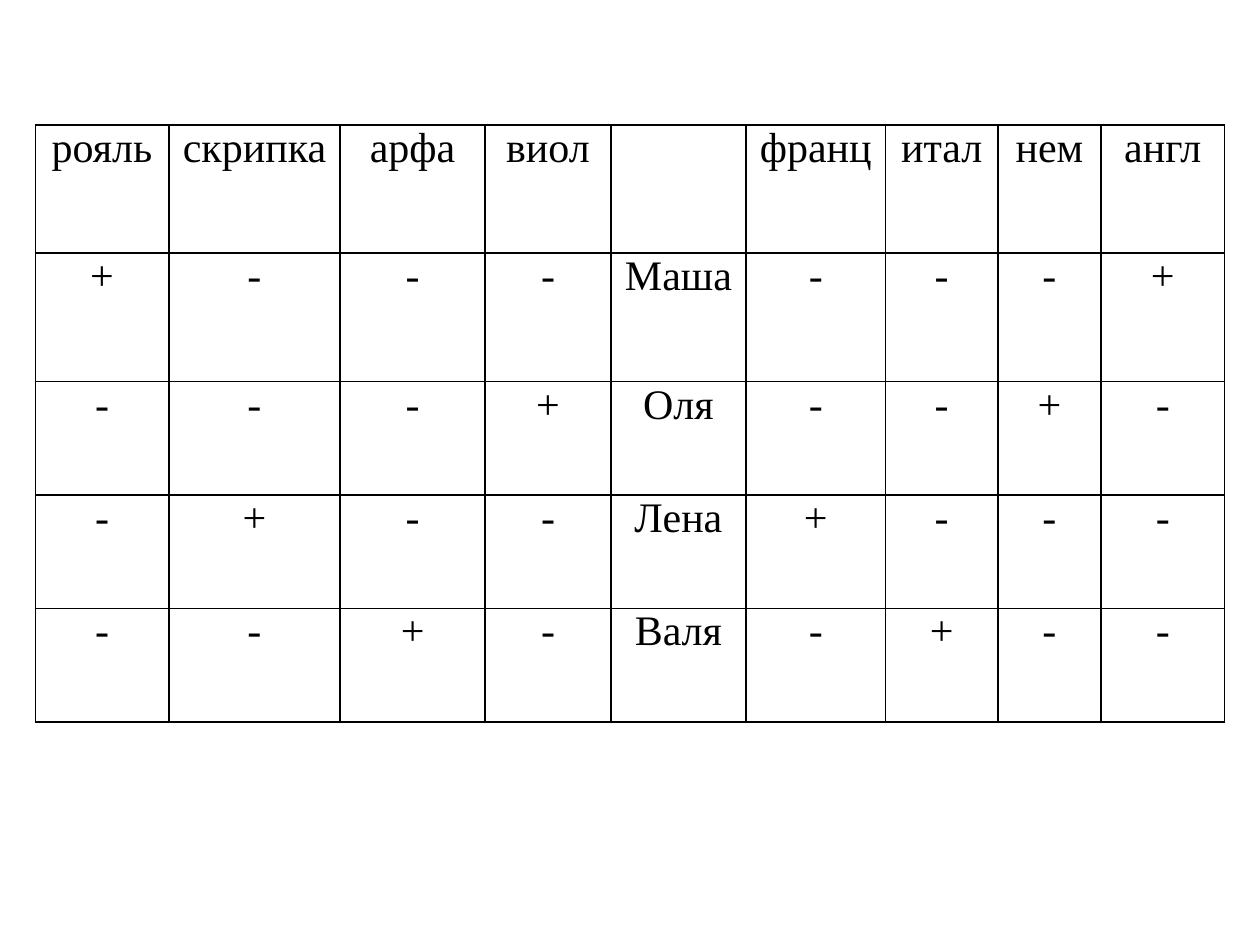
from lxml import etree
from pptx import Presentation
from pptx.dml.color import RGBColor
from pptx.enum.text import PP_ALIGN
from pptx.oxml.ns import qn
from pptx.util import Inches, Pt

CENTER = PP_ALIGN.CENTER
BLANK_LAYOUT = 6
COLORS = {"ink": "000000"}

INSTRUMENTS = ["рояль", "скрипка", "арфа", "виол"]
LANGUAGES = ["франц", "итал", "нем", "англ"]
# Each girl with her instrument and her language
GIRLS = [
    ("Маша", "рояль", "англ"),
    ("Оля", "виол", "нем"),
    ("Лена", "скрипка", "франц"),
    ("Валя", "арфа", "итал"),
]
COLUMN_WIDTHS = [1.06, 1.36, 1.15, 1, 1.07, 1.11, 0.89, 0.82, 0.98]
ROW_HEIGHTS = [1.02, 1.02, 0.9, 0.9, 0.9]


def write_text(frame, text, *, font, size, color, align):
    para = frame.paragraphs[0]
    para.alignment = align
    para.font.size = Pt(size)
    if text:
        span = para.add_run()
        span.text = text
        span.font.name = font
        span.font.size = Pt(size)
        span.font.color.rgb = RGBColor.from_string(color)


def marks(options, chosen):
    return ["+" if option == chosen else "-" for option in options]


class PageBuilder:
    """Holds the style and the current slide."""

    font, size, border = "Times New Roman", 24, 1

    def __init__(self, deck):
        self.page = deck.slides.add_slide(deck.slide_layouts[BLANK_LAYOUT])

    def frame_cell(self, cell):
        properties = cell._tc.get_or_add_tcPr()
        for side in ("lnL", "lnR", "lnT", "lnB"):
            line = etree.SubElement(properties, qn(f"a:{side}"), w=str(Pt(self.border)))
            fill = etree.SubElement(line, qn("a:solidFill"))
            etree.SubElement(fill, qn("a:srgbClr"), val=COLORS["ink"])

    def table(self, rows, left, top, widths, heights):
        grid = self.page.shapes.add_table(
            len(rows), len(widths), Inches(left), Inches(top),
            Inches(sum(widths)), Inches(sum(heights))).table
        grid.first_row = grid.horz_banding = False
        for column, width in zip(grid.columns, widths):
            column.width = Inches(width)
        for row, height, texts in zip(grid.rows, heights, rows):
            row.height = Inches(height)
            for cell, text in zip(row.cells, texts):
                cell.margin_left = cell.margin_right = Inches(0.07)
                cell.margin_top = cell.margin_bottom = 0
                self.frame_cell(cell)
                cell.fill.background()
                write_text(cell.text_frame, text, font=self.font, size=self.size,
                           color=COLORS["ink"], align=CENTER)


def main():
    deck = Presentation()
    deck.slide_width, deck.slide_height = Inches(10), Inches(7.5)

    # Instruments on the left, names in the middle, languages on the right
    rows = [INSTRUMENTS + [""] + LANGUAGES]
    for name, instrument, language in GIRLS:
        rows.append(marks(INSTRUMENTS, instrument) + [name] + marks(LANGUAGES, language))

    PageBuilder(deck).table(rows, 0.28, 0.99, COLUMN_WIDTHS, ROW_HEIGHTS)
    deck.save("out.pptx")


if __name__ == "__main__":
    main()
